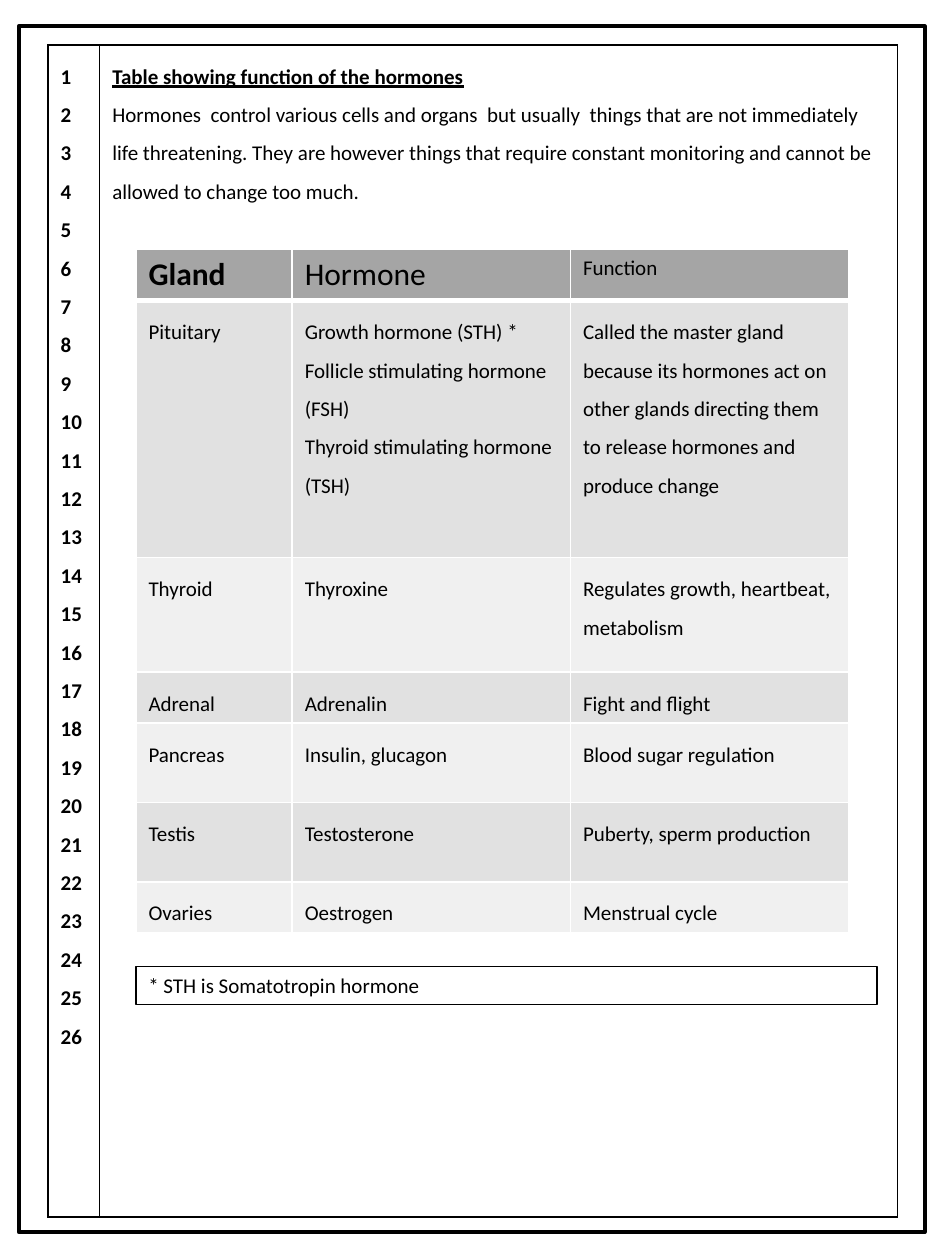
from lxml import etree
from pptx import Presentation
from pptx import util as u
from pptx.dml.color import RGBColor
from pptx.enum import shapes, text
from pptx.oxml.ns import qn

BLACK = RGBColor(0x00, 0x00, 0x00)
WHITE = RGBColor(0xFF, 0xFF, 0xFF)
HEADER = RGBColor(0xA5, 0xA5, 0xA5)
BANDS = (RGBColor(0xE1, 0xE1, 0xE1), RGBColor(0xF0, 0xF0, 0xF0))

TITLE = "Table showing function of the hormones"
INTRO = (
    "Hormones  control various cells and organs  but usually  things that are "
    "not immediately life threatening. They are however things that require "
    "constant monitoring and cannot be allowed to change too much."
)
NOTE = "* STH is Somatotropin hormone"
HEADINGS = (("Gland", 18, True), ("Hormone", 18, False), ("Function", 12, False))
GLANDS = (
    (5.18, "Pituitary",
     "Growth hormone (STH) *\nFollicle stimulating hormone (FSH)\n"
     "Thyroid stimulating hormone (TSH)",
     "Called the master gland because its hormones act on other glands "
     "directing them to release hormones and produce change"),
    (2.31, "Thyroid", "Thyroxine", "Regulates growth, heartbeat, metabolism"),
    (0.97, "Adrenal", "Adrenalin", "Fight and flight"),
    (1.6, "Pancreas", "Insulin, glucagon", "Blood sugar regulation"),
    (1.6, "Testis", "Testosterone", "Puberty, sperm production"),
    (0.89, "Ovaries", "Oestrogen", "Menstrual cycle"),
)


def write(tf, content, size=12, bold=False, spacing=None):
    """Fill a text frame with one left-aligned paragraph per line."""
    tf.text = content
    for p in tf.paragraphs:
        p.alignment = text.PP_ALIGN.LEFT
        p.line_spacing = spacing
        p.font.name = "Calibri"
        p.font.size = u.Pt(size)
        p.font.bold = bold
        p.font.color.rgb = BLACK


def style_cell(cell, line, fill=None, bottom=1):
    """Set the four borders and the fill of a table cell."""
    tc_pr = cell._tc.get_or_add_tcPr()
    for side, width in (("L", 1), ("R", 1), ("T", 1), ("B", bottom)):
        ln = etree.SubElement(tc_pr, qn(f"a:ln{side}"), w=str(u.Pt(width)))
        solid = etree.SubElement(ln, qn("a:solidFill"))
        etree.SubElement(solid, qn("a:srgbClr"), val=str(line))
    if fill is None:
        cell.fill.background()
    else:
        cell.fill.solid()
        cell.fill.fore_color.rgb = fill


def add_grid(s, left, top, widths, heights):
    """Add an unbanded table with the given column widths and row heights."""
    table = s.shapes.add_table(
        len(heights), len(widths), u.Cm(left), u.Cm(top),
        u.Cm(sum(widths)), u.Cm(sum(heights)),
    ).table
    table.first_row = table.horz_banding = False
    for column, width in zip(table.columns, widths):
        column.width = u.Cm(width)
    for row, height in zip(table.rows, heights):
        row.height = u.Cm(height)
    return table


def add_box(s, left, top, width, height, line_width):
    """Add a black-outlined rectangle without fill or shadow."""
    sp = s.shapes.add_shape(
        shapes.MSO_SHAPE.RECTANGLE,
        u.Cm(left), u.Cm(top), u.Cm(width), u.Cm(height),
    )
    sp.shadow.inherit = False
    sp.fill.background()
    sp.line.color.rgb = BLACK
    sp.line.width = u.Pt(line_width)
    return sp


def add_page(s, left, top, width, height):
    """Add the ruled page with its line numbers, title and introduction."""
    margin = 1.04
    table = add_grid(s, left, top, (margin, width - margin), (height,))
    numbers, body = table.cell(0, 0), table.cell(0, 1)
    for cell in (numbers, body):
        style_cell(cell, BLACK)
    write(numbers.text_frame, "\n".join(str(n) for n in range(1, 27)),
          bold=True, spacing=1.5)
    write(body.text_frame, f"{TITLE}\n{INTRO}", spacing=1.5)
    title = body.text_frame.paragraphs[0]
    title.font.bold = title.font.underline = True


def add_hormones(s, left, top, width):
    """Add the table of glands, hormones and functions."""
    first = 3.15
    other = (width - first) / 2
    heights = [0.97] + [gland[0] for gland in GLANDS]
    table = add_grid(s, left, top, (first, other, other), heights)
    for c, (heading, size, bold) in enumerate(HEADINGS):
        cell = table.cell(0, c)
        style_cell(cell, WHITE, HEADER, bottom=3)
        write(cell.text_frame, heading, size, bold)
    for r, (_, *values) in enumerate(GLANDS, 1):
        for c, value in enumerate(values):
            cell = table.cell(r, c)
            style_cell(cell, WHITE, BANDS[(r - 1) % 2])
            write(cell.text_frame, value, spacing=1.5)


def add_note(s, left, top, width, height):
    """Add the boxed footnote."""
    sp = add_box(s, left, top, width, height, 0.75)
    sp.fill.solid()
    sp.fill.fore_color.rgb = WHITE
    tf = sp.text_frame
    write(tf, NOTE)
    tf.word_wrap = True
    tf.vertical_anchor = text.MSO_ANCHOR.TOP
    tf.auto_size = text.MSO_AUTO_SIZE.SHAPE_TO_FIT_TEXT


def main():
    """Build the slide and save it."""
    prs = Presentation()
    prs.slide_width, prs.slide_height = u.Cm(19.05), u.Cm(25.4)
    s = prs.slides.add_slide(prs.slide_layouts[6])
    add_box(s, 0.38, 0.53, 18.26, 24.31, 2.25)
    add_page(s, 0.97, 0.91, 17.12, 23.62)
    add_hormones(s, 2.74, 5.03, 14.37)
    add_note(s, 2.74, 19.48, 14.94, 0.77)
    prs.save("out.pptx")


if __name__ == "__main__":
    main()
